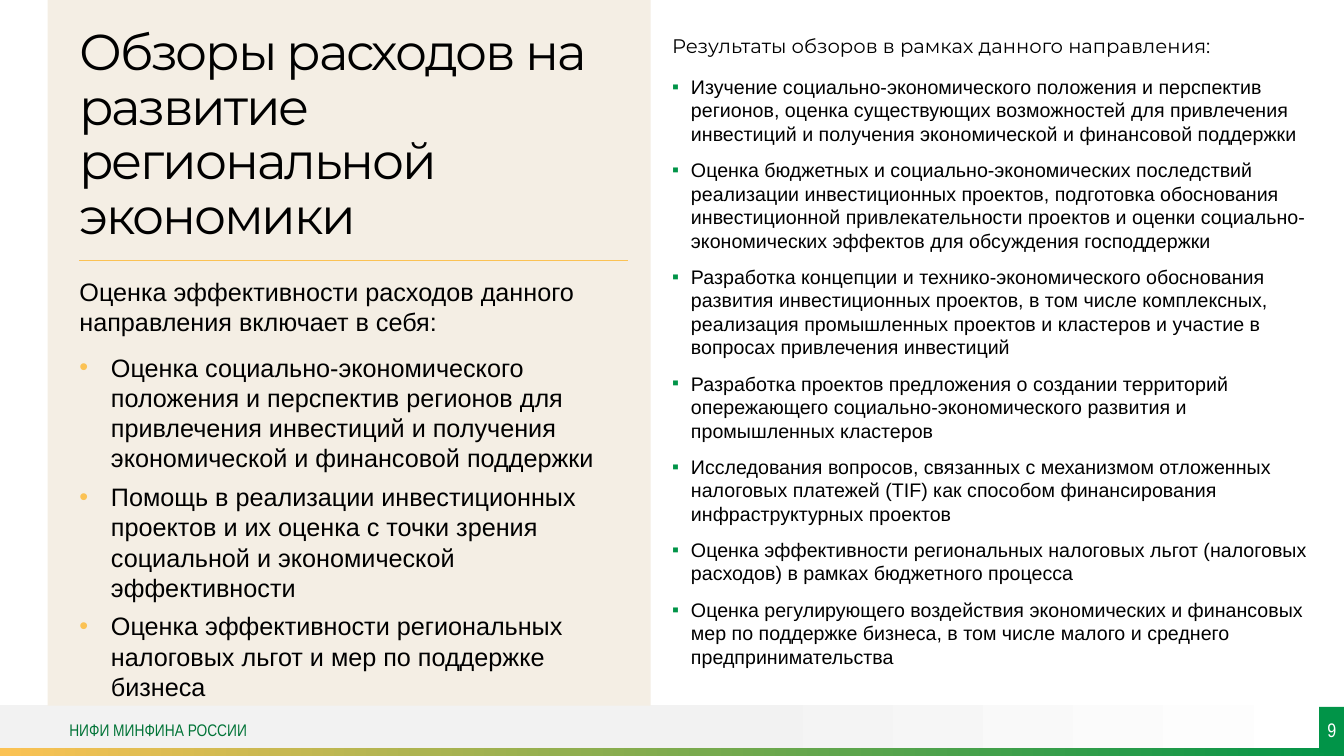
import pptx
import pptx.dml.color
import pptx.enum.shapes
import pptx.enum.text
import pptx.oxml.ns
import pptx.util
from lxml import etree

Pt = pptx.util.Pt
Anchor = pptx.enum.text.MSO_ANCHOR
Align = pptx.enum.text.PP_ALIGN
qn = pptx.oxml.ns.qn

COLORS = {
    "green": "019448",
    "dark_green": "027438",
    "yellow": "FBC254",
    "cream": "F4EEE4",
    "grey": "F2F2F2",
    "white": "FFFFFF",
    "black": "000000",
}

TASKS = [
    "Оценка социально-экономического положения и перспектив регионов для привлечения инвестиций и получения экономической и финансовой поддержки",
    "Помощь в реализации инвестиционных проектов и их оценка с точки зрения социальной и экономической эффективности",
    "Оценка эффективности региональных налоговых льгот и мер по поддержке бизнеса",
]

RESULTS = [
    "Изучение социально-экономического положения и перспектив регионов, оценка существующих возможностей для привлечения инвестиций и получения экономической и финансовой поддержки",
    "Оценка бюджетных и социально-экономических последствий реализации инвестиционных проектов, подготовка обоснования инвестиционной привлекательности проектов и оценки социально-экономических эффектов для обсуждения господдержки",
    "Разработка концепции и технико-экономического обоснования развития инвестиционных проектов, в том числе комплексных, реализация промышленных проектов и кластеров и участие в вопросах привлечения инвестиций",
    "Разработка проектов предложения о создании территорий опережающего социально-экономического развития и промышленных кластеров",
    "Исследования вопросов, связанных с механизмом отложенных налоговых платежей (TIF) как способом финансирования инфраструктурных проектов",
    "Оценка эффективности региональных налоговых льгот (налоговых расходов) в рамках бюджетного процесса",
    "Оценка регулирующего воздействия экономических и финансовых мер по поддержке бизнеса, в том числе малого и среднего предпринимательства",
]


def rgb(name):
    return pptx.dml.color.RGBColor.from_string(COLORS[name])


class SlideBuilder:
    def __init__(self, slide):
        self.slide = slide

    def rect(self, box, fill):
        sp = self.slide.shapes.add_shape(
            pptx.enum.shapes.MSO_SHAPE.RECTANGLE, *map(Pt, box))
        sp.shadow.inherit = False
        sp.line.fill.background()
        sp.fill.solid()
        sp.fill.fore_color.rgb = rgb(fill)
        return sp

    def gradient(self, box, start, end, offset=0):
        fill = self.rect(box, start).fill
        fill.gradient()
        fill.gradient_angle = 0
        for stop, color, position in zip(fill.gradient_stops, (start, end), (offset, 1)):
            stop.color.rgb = rgb(color)
            stop.position = position

    def line(self, x1, y1, x2, y2, color, width):
        cn = self.slide.shapes.add_connector(
            pptx.enum.shapes.MSO_CONNECTOR.STRAIGHT, *map(Pt, (x1, y1, x2, y2)))
        cn.line.color.rgb = rgb(color)
        cn.line.width = Pt(width)
        etree.SubElement(cn._element.spPr, qn("a:effectLst"))

    def frame(self, sp, anchor=Anchor.TOP, inset=(0, 0)):
        tf = sp.text_frame
        tf.word_wrap = True
        tf.vertical_anchor = anchor
        tf.margin_left = tf.margin_right = Pt(inset[0])
        tf.margin_top = tf.margin_bottom = Pt(inset[1])
        return tf

    def textbox(self, box, **frame):
        return self.frame(self.slide.shapes.add_textbox(*map(Pt, box)), **frame)

    def paragraph(self, tf, text, size, font, color="black", before=0, after=0,
                  spacing=1.0, tracking=0, align=Align.LEFT, bullet=None):
        p = tf.paragraphs[0] if not tf.paragraphs[0].runs else tf.add_paragraph()
        if bullet:
            self.bullet(p, *bullet)
        p.alignment = align
        p.line_spacing = spacing
        p.space_before, p.space_after = Pt(before), Pt(after)
        r = p.add_run()
        r.text = text
        r.font.size = Pt(size)
        r.font.name = font
        r.font.color.rgb = rgb(color)
        if tracking:
            r.font._element.set("spc", str(round(tracking * 100)))

    def bullet(self, p, char, color, indent):
        pPr = p._p.get_or_add_pPr()
        pPr.set("marL", str(Pt(indent)))
        pPr.set("indent", str(-Pt(indent)))
        clr = etree.SubElement(pPr, qn("a:buClr"))
        etree.SubElement(clr, qn("a:srgbClr"), val=COLORS[color])
        etree.SubElement(pPr, qn("a:buFont"), typeface="Arial")
        etree.SubElement(pPr, qn("a:buChar"), char=char)


def main():
    prs = pptx.Presentation()
    prs.slide_width, prs.slide_height = Pt(960), Pt(540)
    s = SlideBuilder(prs.slides.add_slide(prs.slide_layouts[6]))

    s.gradient((0, 503.5, 960, 33), "grey", "white", 0.53)
    s.gradient((0, 534.5, 961, 5.5), "yellow", "green")
    s.rect((34, 0, 430.75, 504), "cream")

    footer = s.textbox((49.5, 505, 332, 32.5), anchor=Anchor.MIDDLE)
    s.paragraph(footer, "НИФИ МИНФИНА РОССИИ", 12, "Arial Narrow", "dark_green")

    tasks = s.textbox((56.75, 197.25, 403, 321))
    s.paragraph(tasks, "Оценка эффективности расходов данного направления включает в себя:",
                18, "Arial", after=5)
    for task in TASKS:
        s.paragraph(tasks, task, 18, "Arial", before=6, bullet=("•", "yellow", 22.5))

    number = s.frame(s.rect((942.25, 505, 18, 32.5), "green"), anchor=Anchor.MIDDLE)
    s.paragraph(number, "9", 14, "Arial Narrow", "white", align=Align.CENTER)

    title = s.textbox((56.75, 48, 392, 127), anchor=Anchor.BOTTOM)
    s.paragraph(title, "Обзоры расходов на развитие региональной экономики",
                36, "Montserrat", spacing=0.9, tracking=-1.5)
    s.line(56.75, 186, 448.5, 186, "yellow", 0.5)

    results = s.textbox((473, 21, 469.5, 482.5), inset=(7.2, 3.6))
    s.paragraph(results, "Результаты обзоров в рамках данного направления:",
                14, "Montserrat", after=6)
    for result in RESULTS:
        s.paragraph(results, result, 14, "Arial", before=6, after=3,
                    bullet=("▪", "green", 13.5))

    prs.save("out.pptx")


if __name__ == "__main__":
    main()
